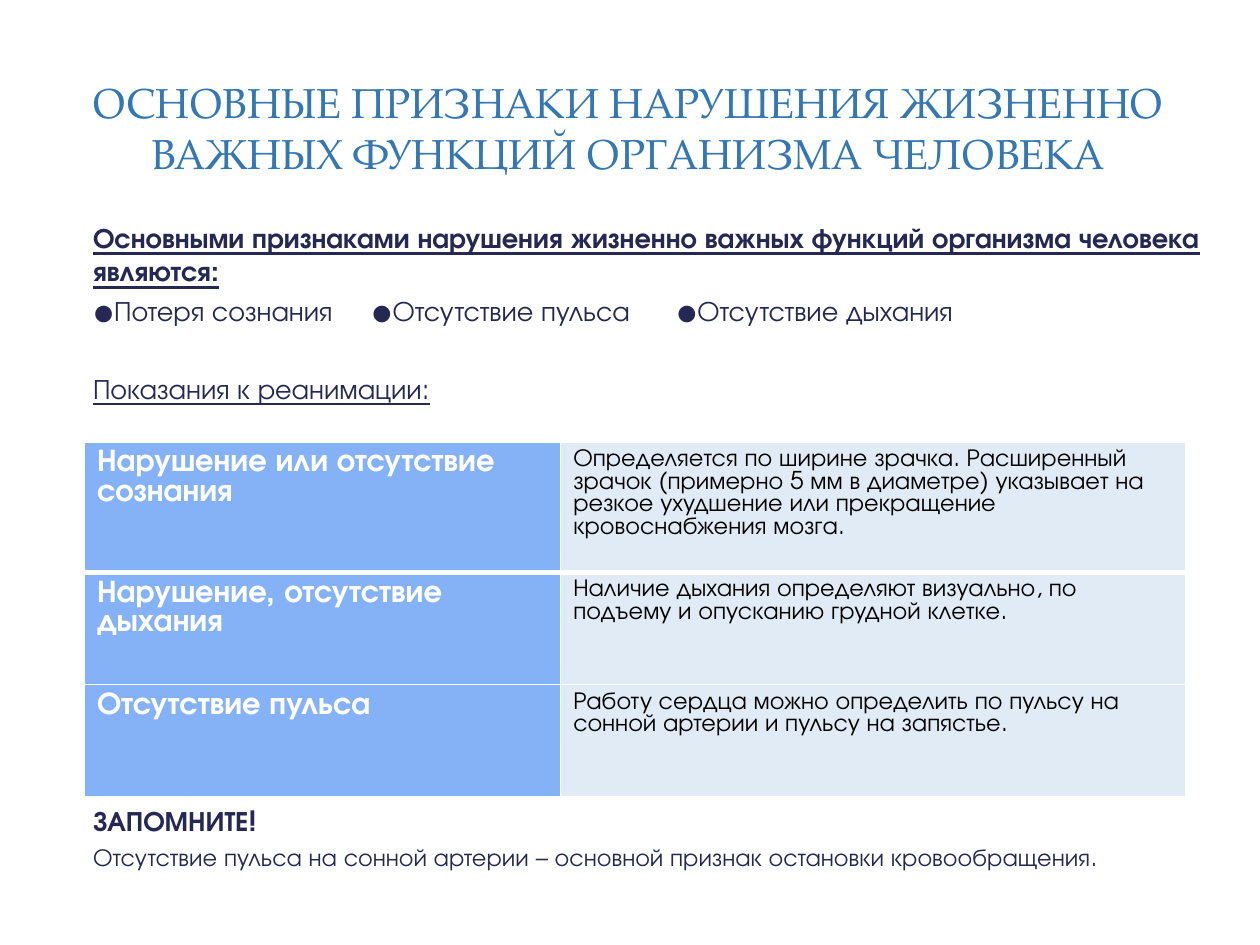
from lxml import etree
from pptx import Presentation
from pptx.dml.color import RGBColor
from pptx.enum import shapes as s
from pptx.enum import text as t
from pptx.oxml.ns import qn
from pptx.util import Inches, Pt

HEAD_FONT, BODY_FONT = "TeX Gyre Pagella", "TeX Gyre Adventor"
BLUE, NAVY, WHITE, BLACK = "3477B2", "242852", "FFFFFF", "000000"

# shape kind, place, opacity in percent
PANELS = [
    (s.MSO_SHAPE.ROUNDED_RECTANGLE, (0.1, 0.11, 9.8, 7.29), 100),
    (s.MSO_SHAPE.RECTANGLE, (0.3, 0.3, 9.4, 1.45), 83),
    (s.MSO_SHAPE.RECTANGLE, (0.41, 0.41, 9.17, 1.22), 100),
]

TITLE = "ОСНОВНЫЕ ПРИЗНАКИ НАРУШЕНИЯ ЖИЗНЕННО ВАЖНЫХ ФУНКЦИЙ ОРГАНИЗМА ЧЕЛОВЕКА"
SIGNS = ["Потеря сознания", "Отсутствие пульса", "Отсутствие дыхания"]
SIGN_TABS = [2.21, 4.63]

# text, space before in points, font values
BODY = [
    ("Основными признаками нарушения жизненно важных функций организма человека являются:",
     3.2, {"bold": True, "underline": True}),
    ("\t".join("●" + sign for sign in SIGNS), 3.2, {}),
    ("Показания к реанимации:", 25.5, {"underline": True}),
    ("ЗАПОМНИТЕ!", 227.5, {"bold": True}),
    ("Отсутствие пульса на сонной артерии – основной признак остановки кровообращения.",
     2.8, {"size": Pt(14)}),
]

ROWS = [
    ("Нарушение или отсутствие сознания",
     "Определяется по ширине зрачка. Расширенный зрачок (примерно 5 мм в диаметре) "
     "указывает на резкое ухудшение или прекращение кровоснабжения мозга."),
    ("Нарушение, отсутствие дыхания",
     "Наличие дыхания определяют визуально, по подъему и опусканию грудной клетке."),
    ("Отсутствие пульса",
     "Работу сердца можно определить по пульсу на сонной артерии и пульсу на запястье."),
]
# width, fill, text colour, font values
COLUMNS = [
    (3.78, "85B2F6", WHITE, {"size": Pt(18), "bold": True}),
    (4.96, "E0EBF6", BLACK, {"size": Pt(14), "bold": False}),
]
ROW_HEIGHT = 0.89


def rgb(value):
    return RGBColor.from_string(value)


def add_panel(page, kind, place, opacity):
    panel = page.shapes.add_shape(kind, *map(Inches, place))
    panel.shadow.inherit = False
    panel.line.fill.background()
    panel.fill.solid()
    panel.fill.fore_color.rgb = rgb(WHITE)
    if kind == s.MSO_SHAPE.ROUNDED_RECTANGLE:
        panel.adjustments[0] = 0.02
    if opacity < 100:
        color = panel._element.spPr.find(qn("a:solidFill"))[0]
        etree.SubElement(color, qn("a:alpha"), val=str(opacity * 1000))


def write(para, words, color, values):
    span = para.add_run()
    span.text = words
    span.font.color.rgb = rgb(color)
    for name, value in values.items():
        setattr(span.font, name, value)


def add_box(page, place, anchor):
    frame = page.shapes.add_textbox(*map(Inches, place)).text_frame
    frame.word_wrap = True
    frame.vertical_anchor = anchor
    return frame


def set_tabs(para, stops):
    tabs = etree.SubElement(para._p.get_or_add_pPr(), qn("a:tabLst"))
    for stop in stops:
        etree.SubElement(tabs, qn("a:tab"), pos=str(Inches(stop)), algn="l")


def set_borders(cell, widths):
    """Draw white cell borders; they must stand before the fill in the XML."""
    props = cell._tc.get_or_add_tcPr()
    for index, (side, width) in enumerate(widths.items()):
        line = etree.Element(qn("a:ln" + side), w=str(Pt(width)))
        fill = etree.SubElement(line, qn("a:solidFill"))
        etree.SubElement(fill, qn("a:srgbClr"), val=WHITE)
        props.insert(index, line)


def add_signs_table(page):
    width = sum(column[0] for column in COLUMNS)
    place = (0.67, 3.51, width, ROW_HEIGHT * len(ROWS))
    table = page.shapes.add_table(len(ROWS), len(COLUMNS), *map(Inches, place)).table
    table.first_row = table.horz_banding = False
    for row in table.rows:
        row.height = Inches(ROW_HEIGHT)
    for c, (width, fill, color, values) in enumerate(COLUMNS):
        table.columns[c].width = Inches(width)
        for r, row in enumerate(ROWS):
            cell = table.cell(r, c)
            cell.fill.solid()
            cell.fill.fore_color.rgb = rgb(fill)
            set_borders(cell, {"L": 1, "R": 1, "T": 3 if r == 1 else 1,
                               "B": 3 if r == 0 else 1})
            para = cell.text_frame.paragraphs[0]
            write(para, row[c], color, {"name": BODY_FONT, **values})


def main():
    deck = Presentation()
    deck.slide_width, deck.slide_height = Inches(10), Inches(7.5)
    page = deck.slides.add_slide(deck.slide_layouts[6])

    for panel in PANELS:
        add_panel(page, *panel)

    title = add_box(page, (0.47, 0.44, 9.03, 1.14), t.MSO_ANCHOR.MIDDLE).paragraphs[0]
    title.alignment = t.PP_ALIGN.CENTER
    write(title, TITLE, BLUE, {"name": HEAD_FONT, "size": Pt(24)})

    add_signs_table(page)

    body = add_box(page, (0.64, 1.7, 9.16, 5.51), t.MSO_ANCHOR.TOP)
    for index, (words, gap, values) in enumerate(BODY):
        para = body.add_paragraph() if index else body.paragraphs[0]
        para.space_before = Pt(gap)
        if "\t" in words:
            set_tabs(para, SIGN_TABS)
        write(para, words, NAVY, {"name": BODY_FONT, "size": Pt(16), **values})

    deck.save("out.pptx")


if __name__ == "__main__":
    main()
